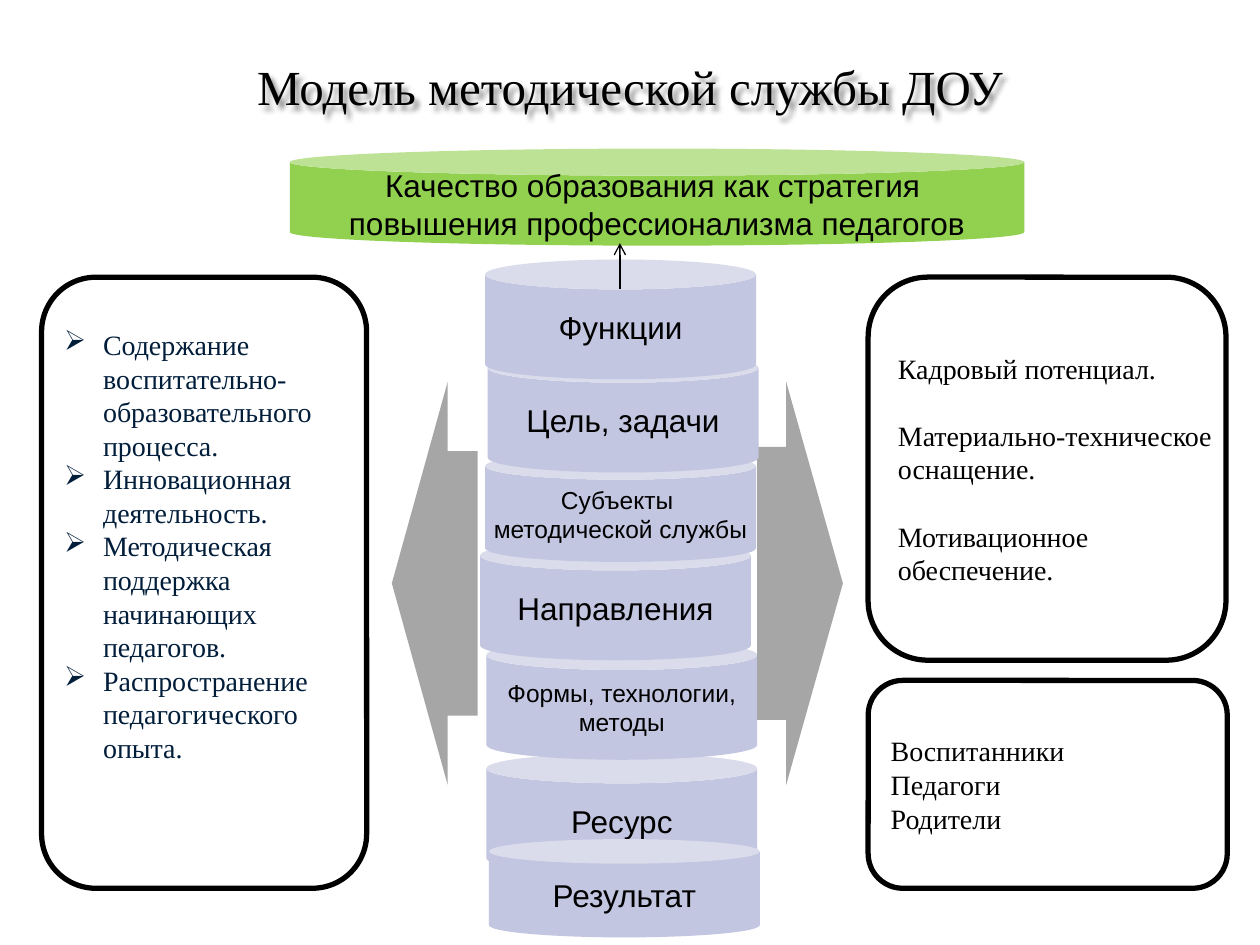
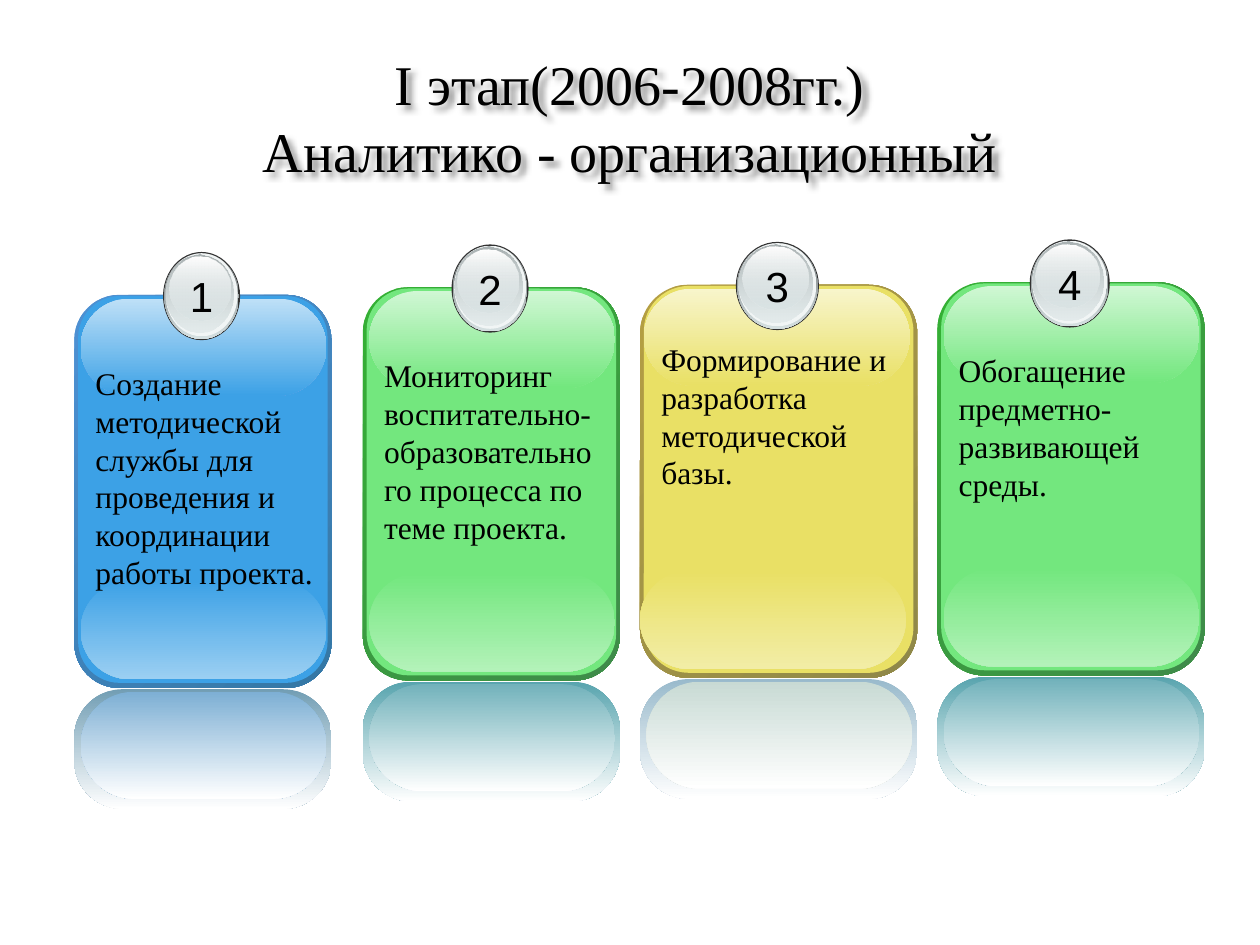
from pptx import Presentation
from pptx.dml.color import RGBColor
from pptx.enum.shapes import MSO_CONNECTOR, MSO_SHAPE as Preset
from pptx.enum.text import MSO_ANCHOR as Anchor, PP_ALIGN as Align
from pptx.oxml import parse_xml
from pptx.oxml.ns import nsdecls, qn
from pptx.util import Inches, Pt

COLORS = {
    "black": "000000", "white": "FFFFFF", "navy": "001D3A",
    "lilac": "C2C6E0", "lime": "92D050", "gray": "A6A6A6",
    "rim": "333333", "steel": "636869", "silver": "D6E1E2",
    "pale": "F1F5F5", "ash": "AAB2B3",
}
SERIF, SANS = "Times New Roman", "Arial"

# Card palettes: edge gradient, panel, gloss at base and top, reflections
BLUE = dict(edge=("4E91D4", "3477A4"), panel="3CA1E6", base="9BCFF2",
            top="BEE0F7", outer="729EB4", inner="7DAFD4")
GREEN = dict(edge=("34B034", "3F8B4A"), panel="73E77E", base="B3F2B9",
             top="D0F7D4", outer="58A4AE", inner="72B2BB")
YELLOW = dict(edge=("B59F43", "8F8849"), panel="E9E065", base="F2EDA6",
              top="F8F5CC", outer="99BACC", inner="C8DAD4")


def rgb(color):
    return RGBColor.from_string(COLORS.get(color, color))


def write_text(shape, text, size=18, font=SANS, color="black", align=Align.LEFT,
               anchor=Anchor.MIDDLE, wrap=False, bullet=None, gaps=()):
    """Write one paragraph per list item; gaps names those with space before."""
    frame = shape.text_frame
    frame.word_wrap = wrap
    frame.vertical_anchor = anchor
    lines = [text] if isinstance(text, str) else text
    for index, line in enumerate(lines):
        paragraph = frame.paragraphs[0] if index == 0 else frame.add_paragraph()
        paragraph.text = line
        paragraph.alignment = align
        if index in gaps:
            paragraph.space_before = Pt(size * 1.2)
        if bullet:
            properties = paragraph._p.get_or_add_pPr()
            properties.set("marL", str(Inches(0.31)))
            properties.set("indent", str(-Inches(0.31)))
            properties.append(parse_xml(
                f'<a:buChar {nsdecls("a")} char="{bullet}"/>'))
        for run in paragraph.runs:
            run.font.size = Pt(size)
            run.font.name = font
            run.font.color.rgb = rgb(color)


class Deck:
    def __init__(self):
        self.presentation = Presentation()
        self.presentation.slide_width = Inches(10)
        self.presentation.slide_height = Inches(7.5)
        self.slide = None

    def new_slide(self, title, height, size):
        layout = self.presentation.slide_layouts[6]
        self.slide = self.presentation.slides.add_slide(layout)
        shape = self.text(title, 0.5, 0.3, 9, height, size=size, font=SERIF,
                          align=Align.CENTER, anchor=Anchor.MIDDLE)
        shape.element.spPr.append(parse_xml(
            f'<a:effectLst {nsdecls("a")}>'
            '<a:outerShdw blurRad="38100" dist="38100" dir="2700000">'
            '<a:srgbClr val="000000"><a:alpha val="43000"/></a:srgbClr>'
            '</a:outerShdw></a:effectLst>'))

    def text(self, text, left, top, width, height, wrap=True,
             anchor=Anchor.TOP, **style):
        shape = self.slide.shapes.add_textbox(
            Inches(left), Inches(top), Inches(width), Inches(height))
        write_text(shape, text, wrap=wrap, anchor=anchor, **style)
        return shape

    def shape(self, preset, left, top, width, height, fill=None, angle=90,
              alpha=None, line=None, adjust=()):
        """A pair of fill colours is a gradient; alpha fades the second one."""
        shape = self.slide.shapes.add_shape(
            preset, Inches(left), Inches(top), Inches(width), Inches(height))
        shape.shadow.inherit = False
        for index, value in enumerate(adjust):
            shape.adjustments[index] = value
        if fill is None:
            shape.fill.background()
        elif isinstance(fill, tuple):
            self.gradient(shape, fill, angle, alpha)
        else:
            shape.fill.solid()
            shape.fill.fore_color.rgb = rgb(fill)
        if line:
            shape.line.color.rgb = rgb("black")
            shape.line.width = Pt(line)
        else:
            shape.line.fill.background()
        return shape

    def gradient(self, shape, colors, angle, alpha):
        shape.fill.gradient()
        shape.fill.gradient_angle = 360 - angle
        for stop, color, position in zip(shape.fill.gradient_stops, colors, (0, 1)):
            stop.color.rgb = rgb(color)
            stop.position = position
        if alpha is not None:
            faded = list(shape.element.spPr.iter(qn("a:srgbClr")))[-1]
            faded.append(parse_xml(
                f'<a:alpha {nsdecls("a")} val="{alpha * 1000}"/>'))

    def can(self, text, left, top, width=2.15, height=0.95, size=18,
            fill="lilac", depth=0.25):
        shape = self.shape(Preset.CAN, left, top, width, height,
                           fill=fill, adjust=[depth])
        write_text(shape, text, size=size, align=Align.CENTER)

    def frame(self, left, top, width, height, text=None, **style):
        shape = self.shape(Preset.ROUNDED_RECTANGLE, left, top, width, height,
                           line=3, adjust=[0.167])
        if text:
            write_text(shape, text, size=16, font=SERIF, **style)

    def arrow(self, left, top, right, bottom):
        connector = self.slide.shapes.add_connector(
            MSO_CONNECTOR.STRAIGHT,
            Inches(left), Inches(top), Inches(right), Inches(bottom))
        connector.line.color.rgb = rgb("black")
        connector.line.width = Pt(0.75)
        connector.line._get_or_add_ln().append(
            parse_xml(f'<a:tailEnd {nsdecls("a")} type="arrow"/>'))
        connector.element.spPr.append(
            parse_xml(f'<a:effectLst {nsdecls("a")}/>'))

    def badge(self, number, left, top, width):
        # Each layer: inset, drop, narrowing, height, fill, alpha
        layers = [
            (0, 0, 0, 0.7, "rim", None),
            (0.01, 0.01, 0.02, 0.68, ("steel", "silver"), None),
            (0.02, 0.01, 0.04, 0.66, ("pale", "pale"), None),
            (0.02, 0.02, 0.07, 0.62, ("ash", "silver"), 48),
            (0.05, 0.04, 0.13, 0.5, ("white", "silver"), 38),
        ]
        for inset, drop, narrowing, height, fill, alpha in layers:
            self.shape(Preset.OVAL, left + inset, top + drop, width - narrowing,
                       height, fill=fill, alpha=alpha)
        self.text(str(number), left, top + 0.1, width, 0.5, size=24,
                  align=Align.CENTER, wrap=False)

    def card(self, number, text, left, top, width, palette, text_drop=0.5,
             base_inset=0.05, top_inset=0.05):
        panel = palette["panel"]
        gloss_width = width - 0.09
        # Each layer: inset, drop, width, height, corner, fill, angle
        layers = [
            (0, 0, width, 3.12, 0.175, palette["edge"], 45),
            (0.03, 0.01, width - 0.06, 3.07, 0.167, panel, 0),
            (base_inset, 2.27, gloss_width, 0.78, 0.5, (panel, palette["base"]), 90),
            (top_inset, 0.03, gloss_width, 0.77, 0.5, (palette["top"], panel), 90),
            (0, 3.13, width, 0.95, 0.404, (palette["outer"], "white"), 90),
            (0.05, 3.15, gloss_width, 0.85, 0.5, (palette["inner"], "white"), 90),
        ]
        for inset, drop, layer_width, height, corner, fill, angle in layers:
            self.shape(Preset.ROUNDED_RECTANGLE, left + inset, top + drop,
                       layer_width, height, fill=fill, angle=angle,
                       adjust=[corner])
        badge_width = width * 0.3
        self.badge(number, left + (width - badge_width) / 2 - 0.01,
                   top - 0.34, badge_width)
        self.text(text, left + 0.07, top + text_drop, width - 0.1, 1.9,
                  font=SERIF)


def build_model(deck):
    deck.new_slide("Модель методической службы ДОУ", 0.77, 28)

    # Lower part of the column
    deck.can("Ресурс", 3.86, 5.98)
    deck.can(["Формы, технологии,", "методы"], 3.86, 5.08, size=14)
    deck.can("Направления", 3.81, 4.29)

    # Side arrows and frames
    deck.shape(Preset.LEFT_ARROW, 3.11, 3.03, 0.68, 3.2, fill="gray",
               adjust=[0.656, 0.652])
    deck.frame(0.33, 2.2, 2.58, 4.85)
    deck.text(["Содержание воспитательно-образовательного процесса.",
               "Инновационная деятельность.",
               "Методическая поддержка начинающих педагогов.",
               "Распространение педагогического опыта."],
              0.41, 2.55, 2.41, 4.17, size=16, font=SERIF, color="navy",
              bullet="➢")
    deck.frame(6.89, 2.2, 2.84, 3.04,
               ["Кадровый потенциал.", "Материально-техническое", "оснащение.",
                "Мотивационное", "обеспечение."], gaps=(1, 3))
    deck.shape(Preset.RIGHT_ARROW, 6.01, 3.03, 0.68, 3.2, fill="gray",
               adjust=[0.677, 0.662])

    # Goal at the top
    deck.can(["Качество образования как стратегия ",
              "повышения профессионализма педагогов"],
             2.3, 1.18, 5.83, 0.77, fill="lime", depth=0.279)

    # Upper part of the column and the result
    deck.can(["Субъекты ", "методической службы"], 3.85, 3.59, height=0.87,
             size=14)
    deck.can("Цель, задачи", 3.87, 2.8)
    deck.can("Функции", 3.85, 2.06)
    deck.can("Результат", 3.88, 6.66, height=0.78)
    deck.frame(6.89, 5.4, 2.85, 1.65, ["Воспитанники", "Педагоги", "Родители"])
    deck.arrow(4.92, 2.29, 4.92, 1.93)


def build_first_stage(deck):
    deck.new_slide("I этап(2006-2008гг.)\nАналитико - организационный", 1.25, 32)
    deck.card(1, "Создание методической службы для проведения и координации "
              "работы проекта.", 0.59, 2.34, 2.04, BLUE)
    deck.card(2, "Мониторинг воспитательно-образовательного процесса по теме "
              "проекта.", 2.88, 2.28, 2.04, GREEN)
    deck.card(3, "Формирование и разработка методической базы.",
              5.08, 2.26, 2.2, YELLOW, text_drop=0.39, base_inset=0,
              top_inset=0.03)
    deck.card(4, "Обогащение предметно-развивающей среды.",
              7.44, 2.24, 2.12, GREEN)


def main():
    deck = Deck()
    build_model(deck)
    build_first_stage(deck)
    deck.presentation.save("out.pptx")


if __name__ == "__main__":
    main()
